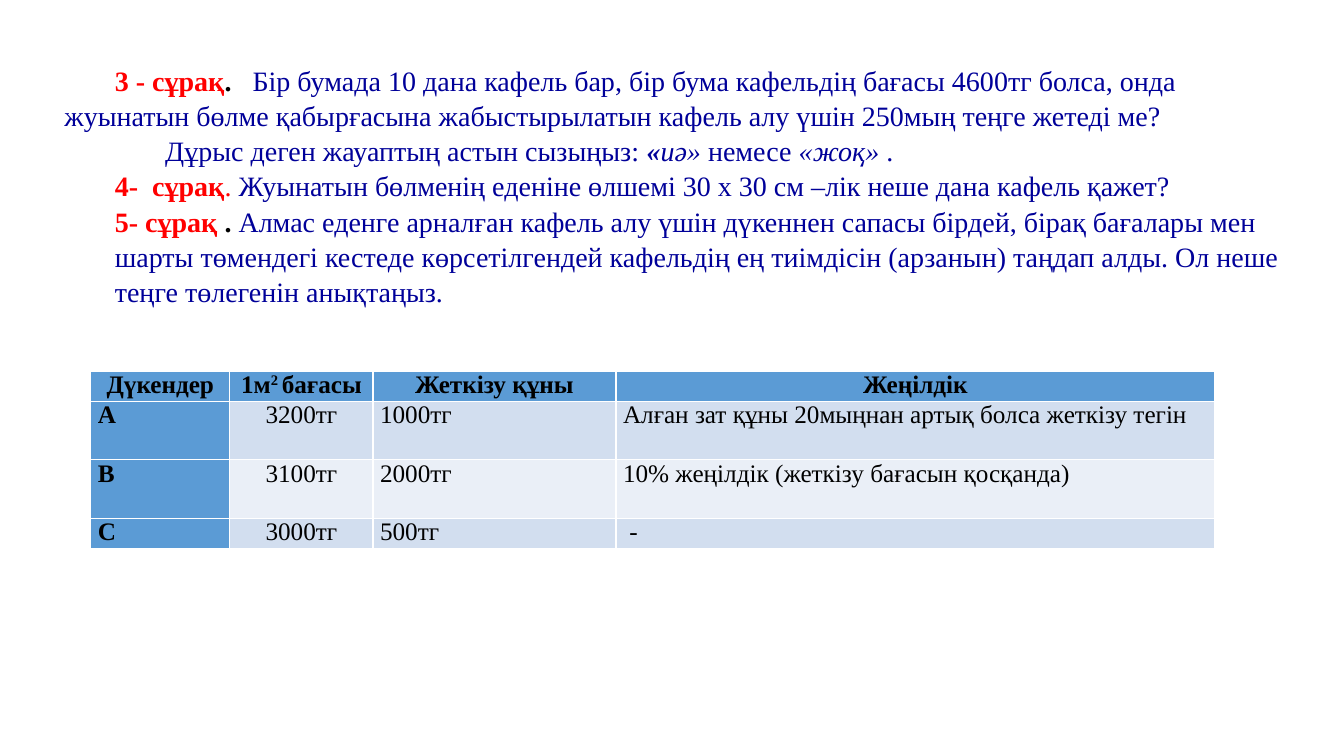
from dataclasses import dataclass

from pptx import Presentation
from pptx.dml.color import RGBColor
from pptx.enum.text import MSO_AUTO_SIZE, PP_ALIGN
from pptx.util import Inches, Pt


@dataclass(frozen=True)
class Theme:
    font: str = "Times New Roman"
    question_size: int = 20
    table_size: int = 18
    red: str = "FF0000"
    navy: str = "000099"
    black: str = "000000"
    header: str = "5B9BD5"
    bands: tuple = ("D2DEEF", "EAEFF7")


THEME = Theme()

STYLES = {
    "label": (THEME.red, True, False),
    "label_dot": (THEME.red, False, False),
    "dot": (THEME.black, True, False),
    "body": (THEME.navy, False, False),
    "quote": (THEME.navy, True, True),
    "answer": (THEME.navy, False, True),
}

QUESTIONS = [
    (0, [
        ("\t3 - сұрақ", "label"),
        (".   ", "dot"),
        ("Бір бумада 10 дана кафель бар, бір бума кафельдің бағасы 4600тг болса, онда "
         "\tжуынатын бөлме қабырғасына жабыстырылатын кафель алу үшін 250мың теңге жетеді ме?",
         "body"),
    ]),
    (0.5, [
        ("\tДұрыс деген жауаптың астын сызыңыз: ", "body"),
        ("«", "quote"),
        ("иә»", "answer"),
        (" немесе ", "body"),
        ("«жоқ»", "answer"),
        (" .", "body"),
    ]),
    (0.5, [
        ("4-  сұрақ", "label"),
        (". ", "label_dot"),
        ("Жуынатын бөлменің еденіне өлшемі 30 х 30 см –лік неше дана кафель қажет?", "body"),
    ]),
    (0.5, [
        ("5- сұрақ ", "label"),
        (". ", "dot"),
        ("Алмас еденге арналған кафель алу үшін дүкеннен сапасы бірдей, бірақ бағалары мен "
         "шарты төмендегі кестеде көрсетілгендей кафельдің ең тиімдісін (арзанын) таңдап алды. "
         "Ол неше теңге төлегенін анықтаңыз.", "body"),
    ]),
]

SUPERSCRIPT = "2 "
SHOPS = [
    [["Дүкендер"], ["1м", SUPERSCRIPT, "бағасы"], ["Жеткізу құны"], ["Жеңілдік"]],
    [["А"], ["3200тг"], ["1000тг"], ["Алған зат құны 20мыңнан артық болса жеткізу тегін"]],
    [["В"], ["3100тг"], ["2000тг"], ["10% жеңілдік (жеткізу бағасын қосқанда)"]],
    [["С"], ["3000тг"], ["500тг"], [" -"]],
]
COLUMN_WIDTHS = [1.38, 1.42, 2.41, 5.94]
ROW_HEIGHTS = [0.29, 0.58, 0.58, 0.29]
PRICE_COLUMN = 1


def add_questions(slide):
    box = slide.shapes.add_textbox(Inches(0.54), Inches(0.56), Inches(12.29), Inches(2.46))
    frame = box.text_frame
    frame.word_wrap = True
    frame.auto_size = MSO_AUTO_SIZE.SHAPE_TO_FIT_TEXT
    for index, (indent, pieces) in enumerate(QUESTIONS):
        question = frame.add_paragraph() if index else frame.paragraphs[0]
        question.line_spacing = 1.05
        question.font.name = THEME.font
        question.font.size = Pt(THEME.question_size)
        if indent:
            question._p.get_or_add_pPr().set("marL", str(Inches(indent)))
        for wording, style in pieces:
            piece = question.add_run()
            piece.text = wording
            color, piece.font.bold, piece.font.italic = STYLES[style]
            piece.font.color.rgb = RGBColor.from_string(color)


def fill_cell(cell, pieces, row, column):
    heading = row == 0 or column == 0
    fill = THEME.header if heading else THEME.bands[(row - 1) % 2]
    cell.fill.solid()
    cell.fill.fore_color.rgb = RGBColor.from_string(fill)
    cell.margin_left = cell.margin_right = Inches(0.07)
    cell.margin_top = cell.margin_bottom = 0
    entry = cell.text_frame.paragraphs[0]
    centered = row == 0 or column == PRICE_COLUMN
    entry.alignment = PP_ALIGN.CENTER if centered else PP_ALIGN.LEFT
    entry.font.name = THEME.font
    entry.font.size = Pt(THEME.table_size)
    entry.font.bold = heading
    entry.font.color.rgb = RGBColor.from_string(THEME.black)
    for wording in pieces:
        piece = entry.add_run()
        piece.text = wording
        if wording == SUPERSCRIPT:
            piece._r.get_or_add_rPr().set("baseline", "30000")


def add_shops(slide):
    shops = slide.shapes.add_table(
        len(SHOPS), len(COLUMN_WIDTHS), Inches(0.9), Inches(3.68),
        Inches(sum(COLUMN_WIDTHS)), Inches(sum(ROW_HEIGHTS))).table
    shops.first_col = True
    for column, width in zip(shops.columns, COLUMN_WIDTHS):
        column.width = Inches(width)
    for row, height in zip(shops.rows, ROW_HEIGHTS):
        row.height = Inches(height)
    for row, entries in enumerate(SHOPS):
        for column, pieces in enumerate(entries):
            fill_cell(shops.cell(row, column), pieces, row, column)


def main():
    deck = Presentation()
    deck.slide_width, deck.slide_height = Inches(13.33), Inches(7.5)
    slide = deck.slides.add_slide(deck.slide_layouts[6])
    add_questions(slide)
    add_shops(slide)
    deck.save("out.pptx")


if __name__ == "__main__":
    main()
